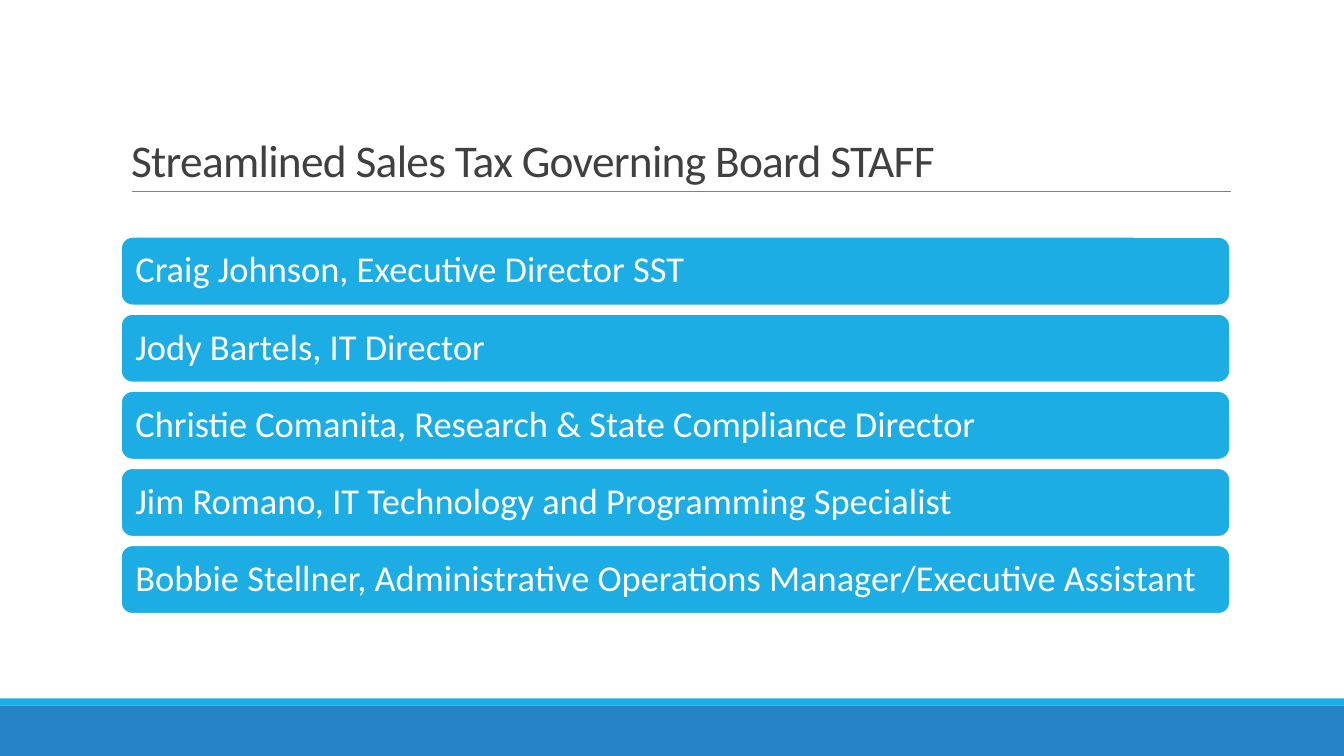
from lxml import etree
from pptx import Presentation
from pptx.dml.color import RGBColor
from pptx.enum import shapes, text
from pptx.oxml import ns
from pptx.util import Inches, Pt

HEADING = "Streamlined Sales Tax Governing Board STAFF"
STAFF = [
    "Craig Johnson, Executive Director SST",
    "Jody Bartels, IT Director",
    "Christie Comanita, Research & State Compliance Director",
    "Jim Romano, IT Technology and Programming Specialist",
    "Bobbie Stellner, Administrative Operations Manager/Executive Assistant",
]
SKY = RGBColor(0x1C, 0xAD, 0xE4)
BLUE = RGBColor(0x26, 0x83, 0xC6)
WHITE = RGBColor(0xFF, 0xFF, 0xFF)
CHARCOAL = RGBColor(0x40, 0x40, 0x40)
GRAY = RGBColor(0x80, 0x80, 0x80)
FOOTER_BANDS = [(6.93, 0.07, SKY), (7, 0.5, BLUE)]
LEFT, WIDTH = 1.2, 11
BAR_TOP, BAR_HEIGHT, BAR_PITCH = 2.35, 0.68, 0.765


def add_block(slide, kind, left, top, width, height, color):
    """Add a filled shape without outline or shadow, measured in inches."""
    block = slide.shapes.add_shape(
        kind, Inches(left), Inches(top), Inches(width), Inches(height))
    block.shadow.inherit = False
    block.fill.solid()
    block.fill.fore_color.rgb = color
    block.line.fill.background()
    return block


def style_paragraph(paragraph, size, color, spacing):
    """Format a left-aligned Calibri paragraph."""
    paragraph.alignment = text.PP_ALIGN.LEFT
    paragraph.line_spacing = spacing
    paragraph.font.name = "Calibri"
    paragraph.font.size = Pt(size)
    paragraph.font.color.rgb = color


def add_heading(slide):
    """Fill the title placeholder and draw the rule below it."""
    heading = slide.shapes.title
    heading.left, heading.top = Inches(LEFT), Inches(0.31)
    heading.width, heading.height = Inches(WIDTH), Inches(1.59)
    frame = heading.text_frame
    frame.text = HEADING
    frame.word_wrap = True
    frame.auto_size = text.MSO_AUTO_SIZE.NONE
    frame.vertical_anchor = text.MSO_ANCHOR.BOTTOM
    style_paragraph(frame.paragraphs[0], 32.4, CHARCOAL, 0.85)
    frame.paragraphs[0].runs[0].font._element.set("spc", "-50")

    rule = slide.shapes.add_connector(
        shapes.MSO_CONNECTOR.STRAIGHT,
        Inches(1.31), Inches(1.9), Inches(12.21), Inches(1.9))
    rule.line.color.rgb = GRAY
    rule.line.width = Pt(0.5)
    etree.SubElement(rule._element.spPr, ns.qn("a:effectLst"))


def add_staff_bar(slide, index, member):
    """Add one rounded bar naming a staff member."""
    bar = add_block(slide, shapes.MSO_SHAPE.ROUNDED_RECTANGLE, LEFT,
                    BAR_TOP + index * BAR_PITCH, WIDTH, BAR_HEIGHT, SKY)
    bar.line.color.rgb = WHITE
    bar.line.width = Pt(1.25)
    frame = bar.text_frame
    frame.text = member
    frame.word_wrap = True
    frame.vertical_anchor = text.MSO_ANCHOR.MIDDLE
    frame.margin_left = frame.margin_right = Inches(0.11)
    frame.margin_top = frame.margin_bottom = Inches(0.11)
    style_paragraph(frame.paragraphs[0], 26, WHITE, 0.9)


def main():
    """Build the staff slide."""
    deck = Presentation()
    deck.slide_width, deck.slide_height = Inches(13.33), Inches(7.5)
    slide = deck.slides.add_slide(deck.slide_layouts.get_by_name("Title Only"))
    for top, height, color in FOOTER_BANDS:
        add_block(slide, shapes.MSO_SHAPE.RECTANGLE, 0, top, 13.33, height, color)
    add_heading(slide)
    for index, member in enumerate(STAFF):
        add_staff_bar(slide, index, member)
    deck.save("out.pptx")


if __name__ == "__main__":
    main()
